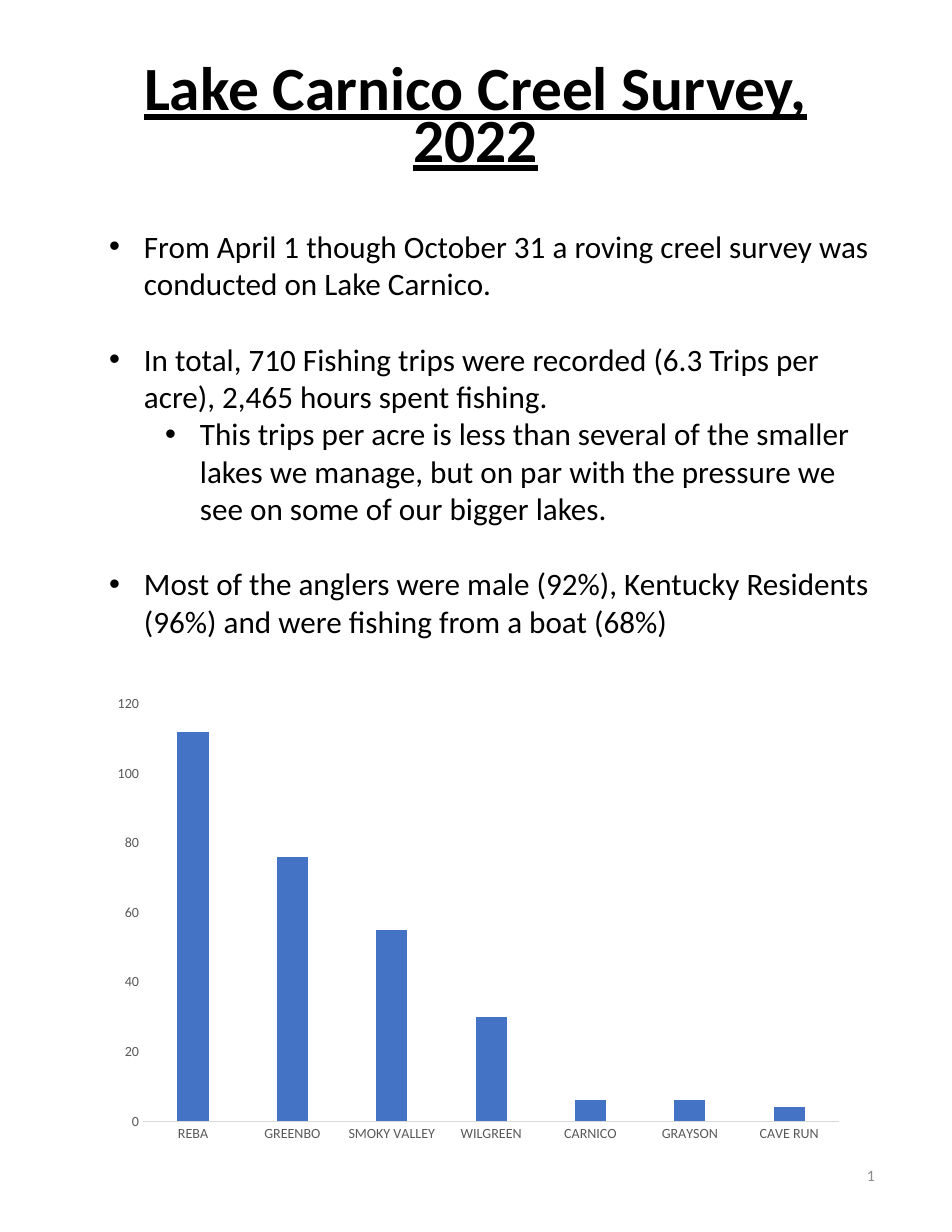
"""Build the Lake Carnico creel survey page with its fishing pressure chart."""
import dataclasses

import pptx
import pptx.chart.data
import pptx.dml.color
import pptx.enum.chart
import pptx.enum.text
import pptx.oxml
import pptx.oxml.ns
import pptx.util
from lxml import etree

PP_ALIGN = pptx.enum.text.PP_ALIGN
ANCHOR = pptx.enum.text.MSO_ANCHOR
TICK = pptx.enum.chart.XL_TICK_MARK


@dataclasses.dataclass(frozen=True)
class Theme:
    """Colours, type sizes and grid unit of the page."""
    font: str = "Calibri"
    ink: str = "000000"
    axis_ink: str = "595959"
    axis_line: str = "D9D9D9"
    page_ink: str = "8C8C8C"
    bar: str = "4472C4"
    title_size: float = 39.5
    body_size: float = 20
    axis_size: float = 9
    page_size: float = 10.2
    paragraph_gap: float = 24.4
    cell: float = 0.125


def rgb(code):
    """Return the colour object for a hex code."""
    return pptx.dml.color.RGBColor.from_string(code)


def apply(target, formats):
    """Set every attribute named in formats on target."""
    for attribute, value in formats.items():
        setattr(target, attribute, value)


class Page:
    """Hold the theme and the slide, and place elements on a 68 by 88 grid."""

    def __init__(self, deck, theme):
        self.theme = theme
        self.slide = deck.slides.add_slide(deck.slide_layouts[1])

    def grid(self, *cells):
        """Turn grid cells into lengths."""
        return [pptx.util.Inches(cell * self.theme.cell) for cell in cells]

    def style(self, font, size, color, **extra):
        """Format a font in the theme's typeface."""
        apply(font, {"name": self.theme.font, "size": pptx.util.Pt(size), **extra})
        font.color.rgb = rgb(color)

    def place(self, holder, area, anchor):
        """Move a text holder to its area and fix its wrapping."""
        apply(holder, dict(zip(("left", "top", "width", "height"), self.grid(*area))))
        apply(holder.text_frame, {
            "word_wrap": True,
            "auto_size": pptx.enum.text.MSO_AUTO_SIZE.NONE,
            "vertical_anchor": anchor,
        })
        return holder.text_frame

    def title(self, heading, area):
        """Write the underlined page title."""
        frame = self.place(self.slide.shapes.title, area, ANCHOR.BOTTOM)
        frame.text = heading
        line = frame.paragraphs[0]
        apply(line, {"alignment": PP_ALIGN.CENTER, "line_spacing": 0.7})
        self.style(line.runs[0].font, self.theme.title_size, self.theme.ink,
                   bold=True, underline=True)

    def findings(self, entries, area):
        """Write bulleted findings given as (level, gap before, text)."""
        frame = self.place(self.slide.placeholders[1], area, ANCHOR.TOP)
        frame.text = "\n".join(text for _, _, text in entries)
        for line, (level, gap, _) in zip(frame.paragraphs, entries):
            apply(line, {
                "level": level,
                "space_before": pptx.util.Pt(gap),
                "space_after": pptx.util.Pt(0),
            })
            properties = line._p.get_or_add_pPr()
            properties.set("marL", str(pptx.util.Inches(0.31 + 0.5 * level)))
            properties.set("indent", str(pptx.util.Inches(-0.31)))
            bullet = etree.SubElement(properties, pptx.oxml.ns.qn("a:buChar"))
            bullet.set("char", "•")
            self.style(line.runs[0].font, self.theme.body_size, self.theme.ink)

    def column_chart(self, pressure, area, plot):
        """Draw one column per lake, with the plot at shares of the chart."""
        lakes = pptx.chart.data.CategoryChartData()
        lakes.categories = list(pressure)
        lakes.add_series("Series 1", list(pressure.values()))
        chart = self.slide.shapes.add_chart(
            pptx.enum.chart.XL_CHART_TYPE.COLUMN_CLUSTERED,
            *self.grid(*area), lakes).chart
        apply(chart, {"has_legend": False, "has_title": False})
        self.style(chart.font, 10, self.theme.ink)
        columns = chart.plots[0]
        apply(columns, {"gap_width": 219, "overlap": -27, "vary_by_categories": False})
        fill = columns.series[0].format.fill
        fill.solid()
        fill.fore_color.rgb = rgb(self.theme.bar)
        for axis in (chart.category_axis, chart.value_axis):
            apply(axis, {
                "has_major_gridlines": False,
                "major_tick_mark": TICK.NONE,
                "minor_tick_mark": TICK.NONE,
            })
            self.style(axis.tick_labels.font, self.theme.axis_size, self.theme.axis_ink)
        baseline = chart.category_axis.format.line
        baseline.width = pptx.util.Pt(0.75)
        baseline.color.rgb = rgb(self.theme.axis_line)
        apply(chart.value_axis, {"minimum_scale": 0, "maximum_scale": 120, "major_unit": 20})
        chart.value_axis.format.line.fill.background()
        self.plot_area(chart, plot)

    def plot_area(self, chart, shares):
        """Fix the inner plot area at shares of the chart."""
        qn = pptx.oxml.ns.qn
        area = chart._chartSpace.chart.plotArea
        for automatic in area.findall(qn("c:layout")):
            area.remove(automatic)
        layout = etree.Element(qn("c:layout"))
        manual = etree.SubElement(layout, qn("c:manualLayout"))
        settings = {"layoutTarget": "inner", "xMode": "edge", "yMode": "edge",
                    **dict(zip("xywh", shares))}
        for tag, value in settings.items():
            etree.SubElement(manual, qn(f"c:{tag}")).set("val", str(value))
        area.insert(0, layout)

    def page_number(self, number, area):
        """Write the page number as a live field."""
        holder = self.slide.shapes.add_textbox(*self.grid(*area))
        line = self.place(holder, area, ANCHOR.MIDDLE).paragraphs[0]
        line.alignment = PP_ALIGN.RIGHT
        run = line.add_run()
        run.text = str(number)
        self.style(run.font, self.theme.page_size, self.theme.page_ink)
        field = etree.SubElement(line._p, pptx.oxml.ns.qn("a:fld"))
        field.set("id", "{B6F15528-21DE-4FAA-801E-634DDDAF4B2B}")
        field.set("type", "slidenum")
        field.extend(list(run._r))
        line._p.remove(run._r)


def main():
    """Build and save the page."""
    theme = Theme()
    deck = pptx.Presentation()
    apply(deck, {"slide_width": pptx.util.Inches(8.5), "slide_height": pptx.util.Inches(11)})
    page = Page(deck, theme)
    page.findings([
        (0, 0, "From April 1 though October 31 a roving creel survey was "
               "conducted on Lake Carnico."),
        (0, theme.paragraph_gap, "In total, 710 Fishing trips were recorded "
                                 "(6.3 Trips per acre), 2,465 hours spent fishing."),
        (1, 0, "This trips per acre is less than several of the smaller lakes we "
               "manage, but on par with the pressure we see on some of our bigger lakes."),
        (0, theme.paragraph_gap, "Most of the anglers were male (92%), Kentucky "
                                 "Residents (96%) and were fishing from a boat (68%)"),
    ], (7, 15.84, 55.92, 33.12))
    page.column_chart({
        "REBA": 112, "GREENBO": 76, "SMOKY VALLEY": 55, "WILGREEN": 30,
        "CARNICO": 6, "GRAYSON": 6, "CAVE RUN": 4,
    }, (7, 48.64, 54, 33.12), (0.06, 0.05, 0.92, 0.9))
    page.page_number(1, (48, 81.6, 15.28, 4.72))
    page.title("Lake Carnico Creel Survey, 2022", (4.64, 4.72, 58.64, 8))
    deck.save("out.pptx")


if __name__ == "__main__":
    main()
